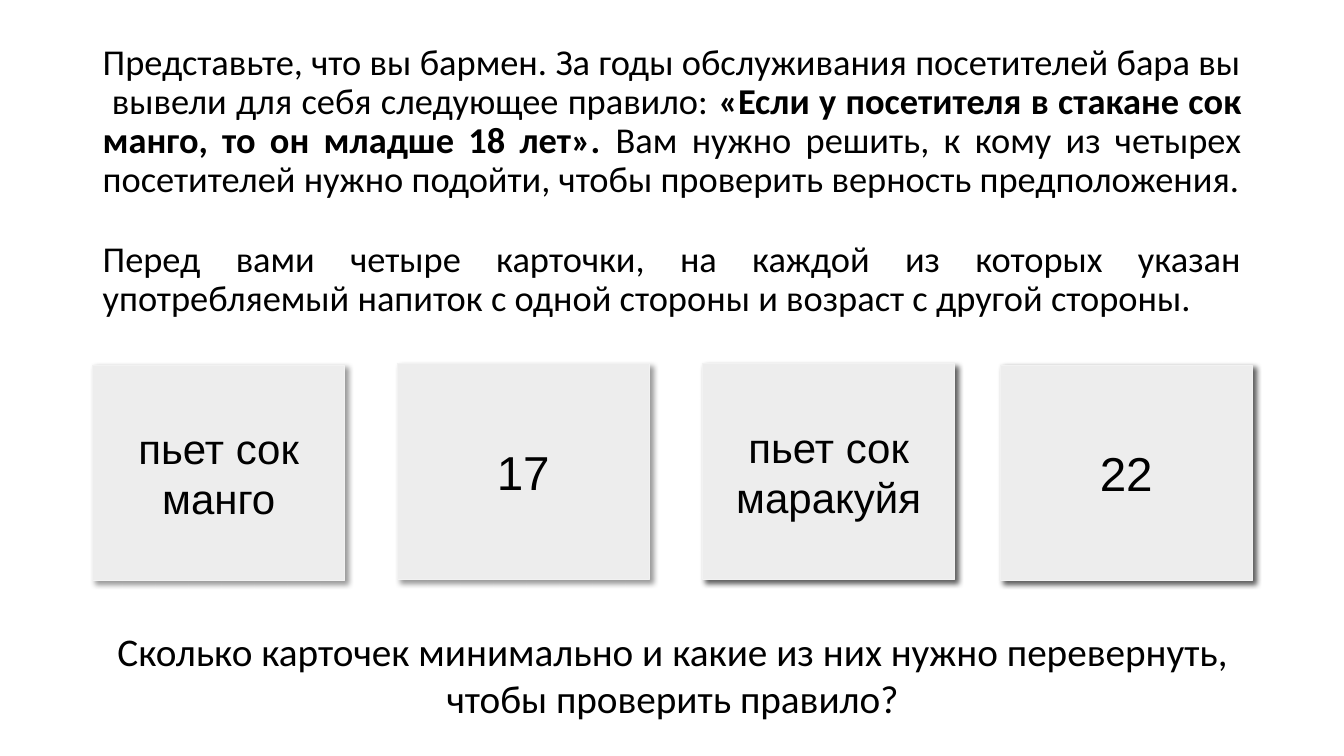
from lxml.etree import SubElement
from pptx import Presentation
from pptx.dml.color import RGBColor
from pptx.enum.shapes import MSO_SHAPE
from pptx.enum.text import MSO_ANCHOR, PP_ALIGN
from pptx.oxml.ns import qn
from pptx.util import Inches, Pt

COLORS = {"text": "000000", "card": "EDEDED", "edge": "F2F2F2", "shadow": "000000"}


def add_span(para, text, size, font, bold=False):
    span = para.add_run()
    span.text = text
    span.font.size = Pt(size)
    span.font.name = font
    span.font.bold = bold
    span.font.color.rgb = RGBColor.from_string(COLORS["text"])


def add_shadow(box, opacity):
    box.shadow.inherit = False
    effects = box._element.spPr.find(qn("a:effectLst"))
    shadow = SubElement(effects, qn("a:outerShdw"), blurRad=str(Pt(4)), dist=str(Pt(3)),
                        dir=str(45 * 60000), algn="tl", rotWithShape="0")
    color = SubElement(shadow, qn("a:srgbClr"), val=COLORS["shadow"])
    SubElement(color, qn("a:alpha"), val=str(opacity * 1000))


deck = Presentation()
deck.slide_width = Inches(13.33)
deck.slide_height = Inches(7.5)
page = deck.slides.add_slide(deck.slide_layouts[6])

story = [
    [
        ("Представьте, что вы бармен. За годы обслуживания посетителей бара вы  вывели для себя следующее правило: ", False),
        ("«Если у посетителя в стакане сок манго, то он младше 18 лет». ", True),
        ("Вам нужно решить, к кому из четырех посетителей нужно подойти, чтобы проверить верность предположения.", False),
    ],
    [("Перед вами четыре карточки, на каждой из которых указан употребляемый напиток с одной стороны и возраст с другой стороны.", False)],
]
box = page.shapes.add_textbox(Inches(0.92), Inches(0.4), Inches(11.5), Inches(2.8))
frame = box.text_frame
frame.word_wrap = True
frame.vertical_anchor = MSO_ANCHOR.MIDDLE
for index, spans in enumerate(story):
    para = frame.add_paragraph() if index else frame.paragraphs[0]
    para.alignment = PP_ALIGN.JUSTIFY
    para.line_spacing = 0.9
    para.space_before = Pt(28.5 if index else 0)
    for text, bold in spans:
        add_span(para, text, 26, "Calibri", bold)

cards = [
    (0.92, 3.62, "пьет сок манго", 30, 40),
    (3.94, 3.61, "17", 34, 40),
    (6.97, 3.61, "пьет сок маракуйя", 30, 64),
    (9.92, 3.62, "22", 34, 64),
]
for left, top, text, size, opacity in cards:
    box = page.shapes.add_shape(MSO_SHAPE.RECTANGLE, Inches(left), Inches(top), Inches(2.5), Inches(2.14))
    box.fill.solid()
    box.fill.fore_color.rgb = RGBColor.from_string(COLORS["card"])
    box.line.color.rgb = RGBColor.from_string(COLORS["edge"])
    box.line.width = Pt(0.5)
    add_shadow(box, opacity)
    frame = box.text_frame
    frame.word_wrap = True
    frame.vertical_anchor = MSO_ANCHOR.MIDDLE
    para = frame.paragraphs[0]
    para.alignment = PP_ALIGN.CENTER
    add_span(para, text, size, "Arial")

box = page.shapes.add_textbox(Inches(0.92), Inches(6.17), Inches(11.5), Inches(1.08))
frame = box.text_frame
frame.word_wrap = True
para = frame.paragraphs[0]
para.alignment = PP_ALIGN.CENTER
add_span(para, "Сколько карточек минимально и какие из них нужно перевернуть, чтобы проверить правило?", 28, "Calibri")

deck.save("out.pptx")
